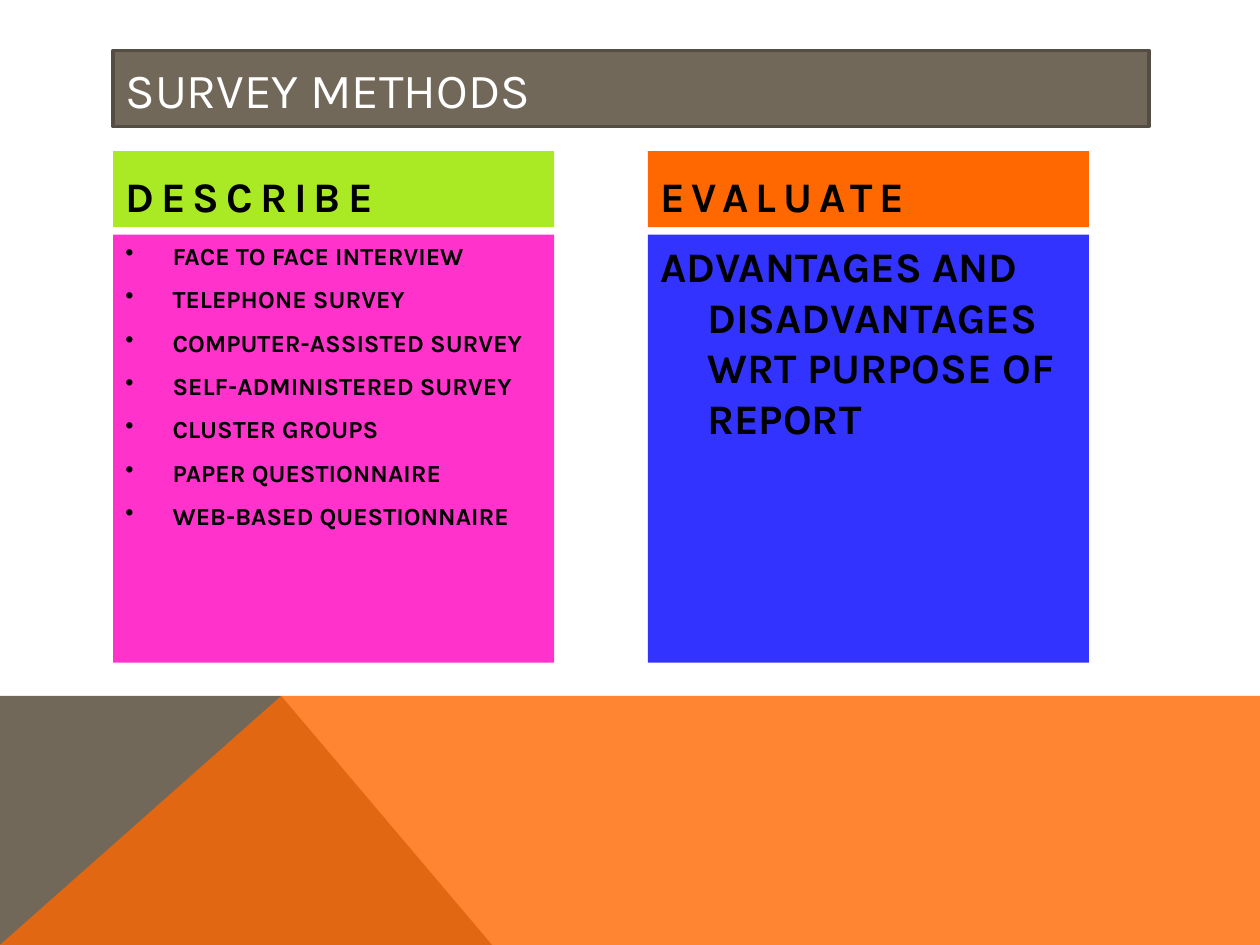
from lxml import etree
from pptx import Presentation
from pptx.dml.color import RGBColor
from pptx.enum.shapes import MSO_SHAPE
from pptx.enum.text import MSO_ANCHOR, PP_ALIGN
from pptx.oxml.ns import qn
from pptx.util import Cm, Pt

RECTANGLE = MSO_SHAPE.RECTANGLE
TOP, MIDDLE, BOTTOM = MSO_ANCHOR.TOP, MSO_ANCHOR.MIDDLE, MSO_ANCHOR.BOTTOM
LEFT = PP_ALIGN.LEFT
FONT = "Karla"
BROWN, ORANGE = "71685A", "FF6700"

# Content
TITLE = "SURVEY METHODS"
COLUMNS = [
    {"heading": "DESCRIBE", "heading_fill": "AAEA25", "body_fill": "FF33CC",
     "size": 14, "bullet": "•",
     "lines": ["FACE TO FACE INTERVIEW", "TELEPHONE SURVEY",
               "COMPUTER-ASSISTED SURVEY", "SELF-ADMINISTERED SURVEY",
               "CLUSTER GROUPS", "PAPER QUESTIONNAIRE",
               "WEB-BASED QUESTIONNAIRE"]},
    {"heading": "EVALUATE", "heading_fill": ORANGE, "body_fill": "3333FF",
     "size": 24, "bullet": None,
     "lines": ["ADVANTAGES AND DISADVANTAGES WRT PURPOSE OF REPORT"]},
]

# Layout in centimetres
WIDTH, HEIGHT = 25.4, 19.05
MARGIN, TITLE_TOP, TITLE_WIDTH = 2.28, 1.02, 20.88
BAR_HEIGHT = 1.53
COLUMN_WIDTH, COLUMN_STEP = 8.89, 10.78
HEADING_TOP, BODY_TOP, BODY_HEIGHT = 3.05, 4.73, 8.63
BAND_TOP, PEAK = 14.03, 5.67
HANGING = 0.95


def color(value):
    return RGBColor.from_string(value)


def paint(shape, fill, opacity=None):
    shape.shadow.inherit = False
    shape.fill.solid()
    shape.fill.fore_color.rgb = color(fill)
    shape.line.fill.background()
    if opacity is not None:
        solid = shape.fill._xPr.find(qn("a:solidFill"))
        etree.SubElement(solid[0], qn("a:alpha"), val=str(opacity * 1000))


def add_polygon(slide, points, fill, opacity=None):
    start, *others = [(Cm(x), Cm(y)) for x, y in points]
    builder = slide.shapes.build_freeform(*start)
    builder.add_line_segments(others, close=True)
    paint(builder.convert_to_shape(), fill, opacity)


def add_box(slide, left, top, width, height, fill):
    shape = slide.shapes.add_shape(
        RECTANGLE, Cm(left), Cm(top), Cm(width), Cm(height))
    paint(shape, fill)
    return shape


def write(shape, lines, size, font_color="000000", bold=True, anchor=TOP,
          before=8, spacing=0, hanging=0, bullet=None):
    frame = shape.text_frame
    frame.word_wrap = True
    frame.vertical_anchor = anchor
    for index, line in enumerate(lines):
        paragraph = frame.paragraphs[0] if index == 0 else frame.add_paragraph()
        paragraph.alignment = LEFT
        paragraph.space_before = Pt(before)
        run = paragraph.add_run()
        run.text = line
        run.font.name = FONT
        run.font.size = Pt(size)
        run.font.bold = bold
        run.font.color.rgb = color(font_color)
        if spacing:
            run.font._element.set("spc", str(spacing * 100))
        properties = paragraph._p.get_or_add_pPr()
        if hanging:
            properties.set("marL", str(Cm(hanging)))
            properties.set("indent", str(-Cm(hanging)))
        if bullet:
            etree.SubElement(properties, qn("a:buChar"), char=bullet)


def main():
    presentation = Presentation()
    presentation.slide_width, presentation.slide_height = Cm(WIDTH), Cm(HEIGHT)
    slide = presentation.slides.add_slide(presentation.slide_layouts[6])

    # Bottom band: brown corner under a translucent orange slope
    add_polygon(slide, [(0, HEIGHT), (0, BAND_TOP), (PEAK, BAND_TOP),
                        (9.92, HEIGHT)], BROWN)
    add_polygon(slide, [(0, HEIGHT), (PEAK, BAND_TOP), (WIDTH, BAND_TOP),
                        (WIDTH, HEIGHT)], ORANGE, opacity=80)

    # Title bar
    title = add_box(slide, MARGIN, TITLE_TOP, TITLE_WIDTH, BAR_HEIGHT, BROWN)
    title.line.color.rgb = color("544D43")
    title.line.width = Pt(2)
    write(title, [TITLE], 28, font_color="FFFFFF", bold=False, anchor=MIDDLE,
          before=0)

    # Columns: heading above body
    for index, column in enumerate(COLUMNS):
        left = MARGIN + index * COLUMN_STEP
        heading = add_box(slide, left, HEADING_TOP, COLUMN_WIDTH, BAR_HEIGHT,
                          column["heading_fill"])
        write(heading, [column["heading"]], 24, anchor=BOTTOM, spacing=4)
        body = add_box(slide, left, BODY_TOP, COLUMN_WIDTH, BODY_HEIGHT,
                       column["body_fill"])
        write(body, column["lines"], column["size"], hanging=HANGING,
              bullet=column["bullet"])

    presentation.save("out.pptx")


if __name__ == "__main__":
    main()
